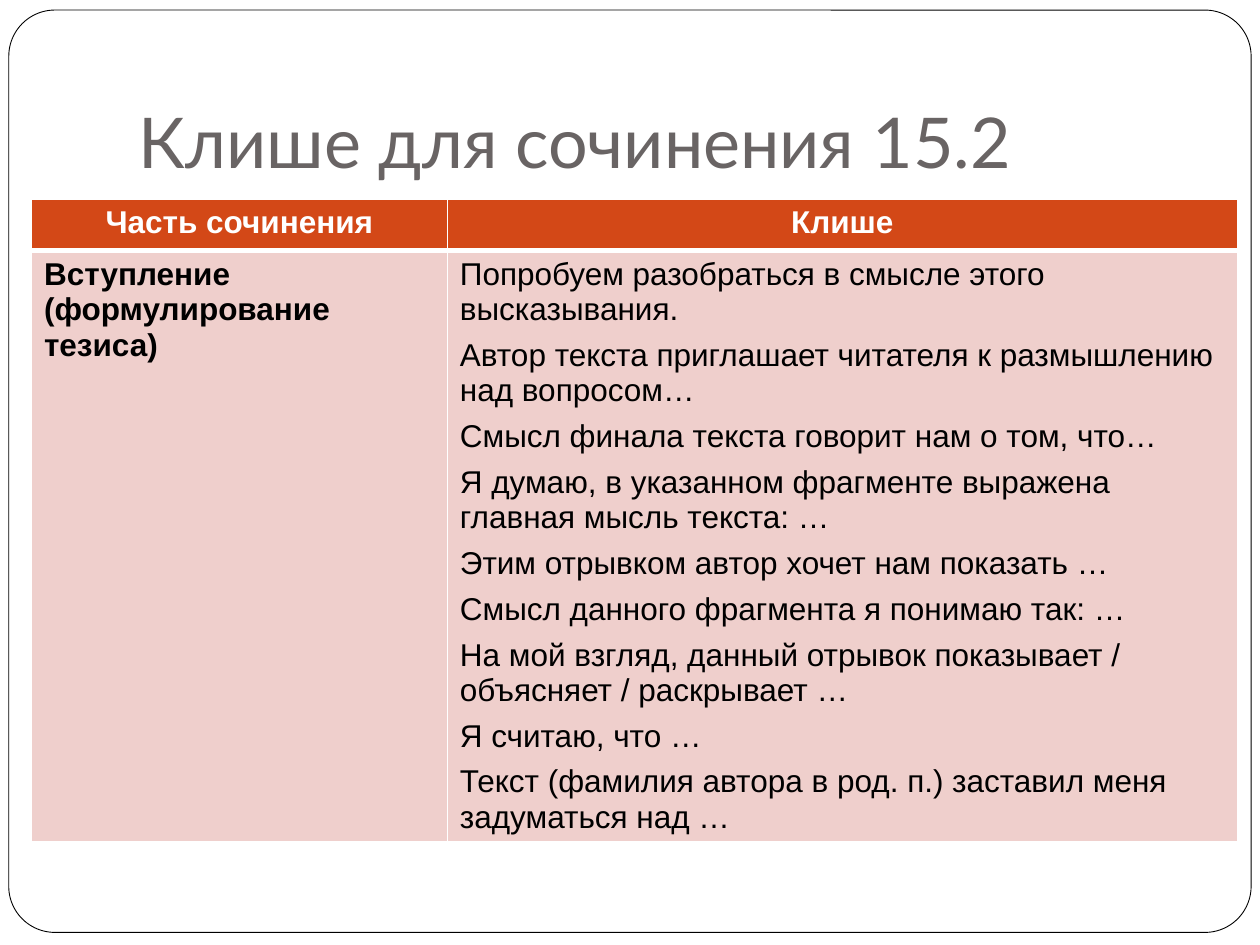
from dataclasses import dataclass

from lxml import etree
from pptx import Presentation, util as u
from pptx.dml.color import RGBColor
from pptx.enum import shapes, text
from pptx.oxml.ns import qn

# Content
TITLE = "Клише для сочинения 15.2"
HEADS = ["Часть сочинения", "Клише"]
PART = "Вступление \n(формулирование тезиса)"
PHRASES = [
    "Попробуем разобраться в смысле этого высказывания.",
    "Автор текста приглашает читателя к размышлению над вопросом…",
    "Смысл финала текста говорит нам о том, что…",
    "Я думаю, в указанном фрагменте выражена главная мысль текста: …",
    "Этим отрывком автор хочет нам показать …",
    "Смысл данного фрагмента я понимаю так: …",
    "На мой взгляд, данный отрывок показывает / объясняет / раскрывает …",
    "Я считаю, что …",
    "Текст (фамилия автора в род. п.) заставил меня задуматься над …",
]


@dataclass(frozen=True)
class Theme:
    white: str = "FFFFFF"
    black: str = "000000"
    grey: str = "696464"
    head: str = "D34817"
    body: str = "EFCFCC"
    font: str = "Arial"
    title_font: str = "Lato"
    size: int = 18
    title_size: int = 40


T = Theme()
WIDE, HIGH = 10, 7.5
COLS = [3.3, 6.27]
ROW = 0.41


def color(code):
    return RGBColor.from_string(code)


def style(par, font, size, code, bold=False):
    for run in par.runs:
        run.font.name, run.font.size, run.font.bold = font, u.Pt(size), bold
        run.font.color.rgb = color(code)


def border(cell, bottom):
    props = cell._tc.get_or_add_tcPr()
    for i, (side, width) in enumerate(zip("LRTB", (1, 1, 1, bottom))):
        line = etree.Element(qn(f"a:ln{side}"), w=str(u.Pt(width)))
        fill = etree.SubElement(line, qn("a:solidFill"))
        etree.SubElement(fill, qn("a:srgbClr"), val=T.white)
        props.insert(i, line)


def put(cell, lines, fill, ink, bold, align, after=0, bottom=1):
    cell.fill.solid()
    cell.fill.fore_color.rgb = color(fill)
    border(cell, bottom)
    frame = cell.text_frame
    for i, line in enumerate(lines):
        par = frame.add_paragraph() if i else frame.paragraphs[0]
        par.text = line
        par.alignment = align
        par.space_after = u.Pt(after)
        style(par, T.font, T.size, ink, bold)


prs = Presentation()
prs.slide_width, prs.slide_height = u.Inches(WIDE), u.Inches(HIGH)
slide = prs.slides.add_slide(prs.slide_layouts[5])

# Rounded frame, behind the title
panel = slide.shapes.add_shape(
    shapes.MSO_SHAPE.ROUNDED_RECTANGLE,
    *map(u.Inches, (0.07, 0.08, 9.86, 7.32)))
panel.adjustments[0] = 0.05
panel.shadow.inherit = False
panel.fill.solid()
panel.fill.fore_color.rgb = color(T.white)
panel.line.color.rgb = color(T.black)
panel.line.width = u.Pt(0.5)

# Title
title = slide.shapes.title
panel._element.getparent().remove(panel._element)
title._element.addprevious(panel._element)
title.left, title.top, title.width, title.height = map(
    u.Inches, (0.1 * WIDE, 0.04 * HIGH, 0.85 * WIDE, 1.25))
frame = title.text_frame
frame.text = TITLE
frame.word_wrap = True
frame.auto_size = text.MSO_AUTO_SIZE.NONE
frame.vertical_anchor = text.MSO_ANCHOR.BOTTOM
frame.margin_left = frame.margin_right = frame.margin_bottom = u.Inches(0.1)
frame.margin_top = u.Inches(0.05)
frame.paragraphs[0].alignment = text.PP_ALIGN.LEFT
style(frame.paragraphs[0], T.title_font, T.title_size, T.grey)

# Table: the second row grows with its text
table = slide.shapes.add_table(
    2, len(COLS), u.Inches(0.25), u.Inches(1.58),
    u.Inches(sum(COLS)), u.Inches(2 * ROW)).table
for col, width in zip(table.columns, COLS):
    col.width = u.Inches(width)
for i, head in enumerate(HEADS):
    put(table.cell(0, i), [head], T.head, T.white, True,
        text.PP_ALIGN.CENTER, bottom=3)
put(table.cell(1, 0), [PART], T.body, T.black, True, text.PP_ALIGN.LEFT)
put(table.cell(1, 1), PHRASES, T.body, T.black, False,
    text.PP_ALIGN.LEFT, after=6)
for cell in table.iter_cells():
    if cell.fill.fore_color.rgb == color(T.body):
        cell.vertical_anchor = text.MSO_ANCHOR.TOP

prs.save("out.pptx")
